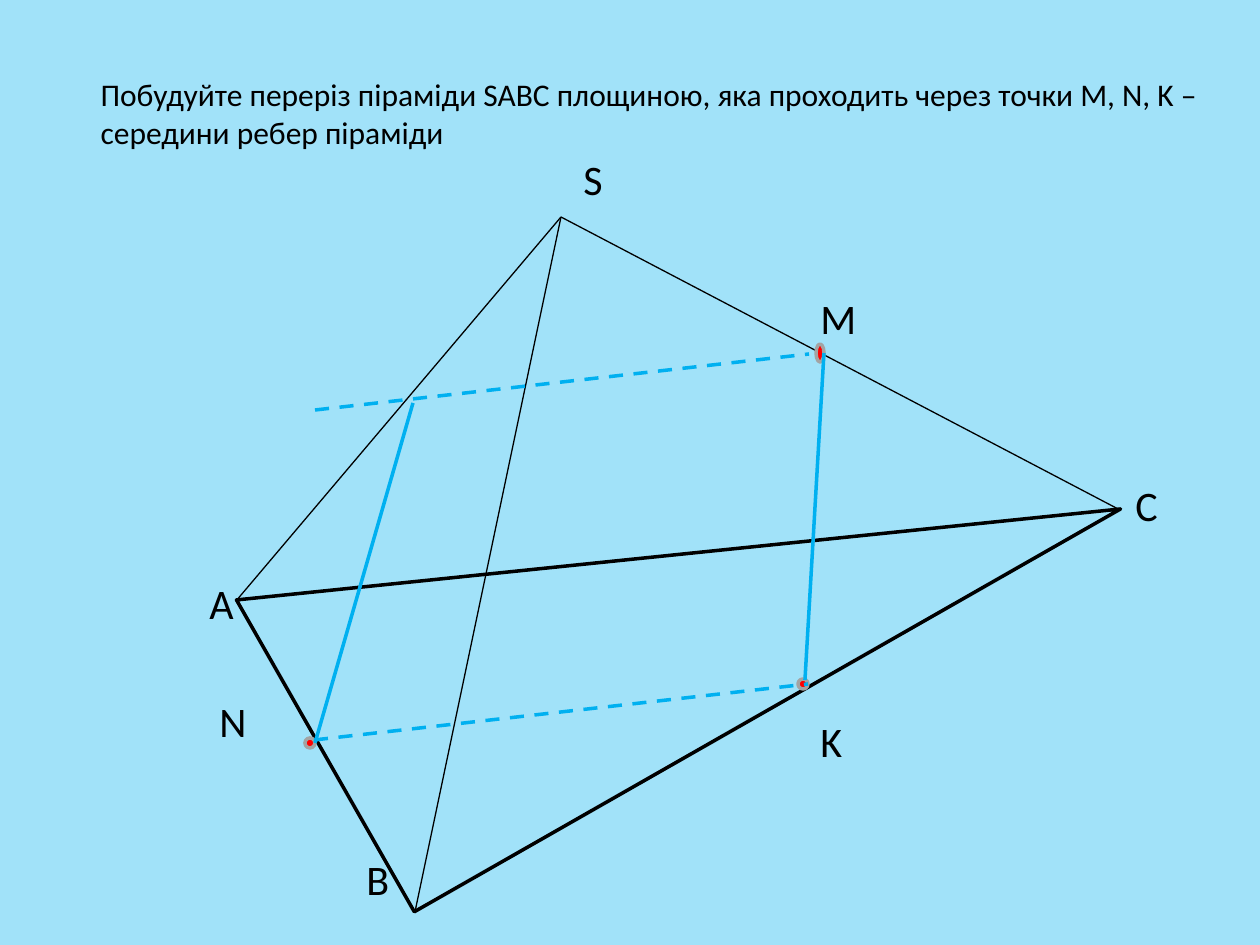
from lxml import etree
from pptx import Presentation
from pptx.dml.color import RGBColor
from pptx.enum.dml import MSO_LINE
from pptx.enum.shapes import MSO_CONNECTOR, MSO_SHAPE
from pptx.enum.text import MSO_ANCHOR, MSO_AUTO_SIZE, PP_ALIGN
from pptx.oxml.ns import qn
from pptx.util import Inches, Pt

PX = Inches(1) / 126
TITLE_ONLY = 5
STRAIGHT = MSO_CONNECTOR.STRAIGHT
DASH = MSO_LINE.DASH
GROW = MSO_AUTO_SIZE.SHAPE_TO_FIT_TEXT

SKY = RGBColor(0xA1, 0xE2, 0xF9)
BLACK = RGBColor(0, 0, 0)
BLUE = RGBColor(0x00, 0xB0, 0xF0)
RED = RGBColor(0xFF, 0, 0)
GREY = RGBColor(0xA3, 0xA3, 0xA3)

TASK = ("Побудуйте переріз піраміди SABC площиною, яка проходить "
        "через точки M, N, K – середини ребер піраміди")
TASK_BOX = (88, 69, 1123, 89)
BASE_BOX, BASE_ANGLE = (272, 375, 813, 359), 330.3

APEX = (561, 217)
BASE_VERTICES = [(1120, 510), (236, 601), (415, 912)]  # C, A, B

LABEL_SIZE = (39, 63)
LABELS = {
    "S": (571, 147), "N": (207, 689), "K": (808, 709), "M": (808, 286),
    "B": (354, 847), "A": (197, 571), "C": (1123, 473),
}
MIDPOINTS = [(305, 738, 10, 10), (798, 679, 10, 10), (816, 344, 8, 18)]  # N, K, M
SECTION_SIDES = [  # start, end, dash style
    ((314, 740), (808, 684), DASH),
    ((805, 680), (824, 353), None),
    ((315, 410), (809, 354), DASH),
    ((413, 403), (315, 743), None),
]


def emu(*lengths):
    return [round(n * PX) for n in lengths]


def write(sp, text, size):
    tf = sp.text_frame
    tf.text = text
    tf.word_wrap = True
    tf.auto_size = GROW
    tf.vertical_anchor = MSO_ANCHOR.TOP
    p = tf.paragraphs[0]
    p.alignment = PP_ALIGN.LEFT
    p.line_spacing = 1.0
    font = p.runs[0].font
    font.name, font.size, font.color.rgb = "Calibri", Pt(size), BLACK


def add_outlined(slide, kind, box, color, fill=None):
    sp = slide.shapes.add_shape(kind, *emu(*box))
    sp.shadow.inherit = False
    if fill is None:
        sp.fill.background()
    else:
        sp.fill.solid()
        sp.fill.fore_color.rgb = fill
    sp.line.color.rgb = color
    sp.line.width = Pt(2)
    return sp


def add_segment(slide, start, end, color, width, dash=None):
    line = slide.shapes.add_connector(STRAIGHT, *emu(*start, *end))
    line.line.color.rgb = color
    line.line.width = Pt(width)
    if dash:
        line.line.dash_style = dash
    etree.SubElement(line._element.spPr, qn("a:effectLst"))


def main():
    prs = Presentation()
    prs.slide_width, prs.slide_height = Inches(10), Inches(7.5)
    slide = prs.slides.add_slide(prs.slide_layouts[TITLE_ONLY])
    slide.background.fill.solid()
    slide.background.fill.fore_color.rgb = SKY

    title = slide.shapes.title
    title.left, title.top, title.width, title.height = emu(*TASK_BOX)
    write(title, TASK, 18)

    base = add_outlined(slide, MSO_SHAPE.RIGHT_TRIANGLE, BASE_BOX, BLACK)
    base.rotation = BASE_ANGLE
    for vertex in BASE_VERTICES:
        add_segment(slide, APEX, vertex, BLACK, 0.75)

    for name, corner in LABELS.items():
        write(slide.shapes.add_textbox(*emu(*corner, *LABEL_SIZE)), name, 24)

    for box in MIDPOINTS:
        add_outlined(slide, MSO_SHAPE.OVAL, box, GREY, RED)
    for start, end, dash in SECTION_SIDES:
        add_segment(slide, start, end, BLUE, 2, dash)

    prs.save("out.pptx")


if __name__ == "__main__":
    main()
